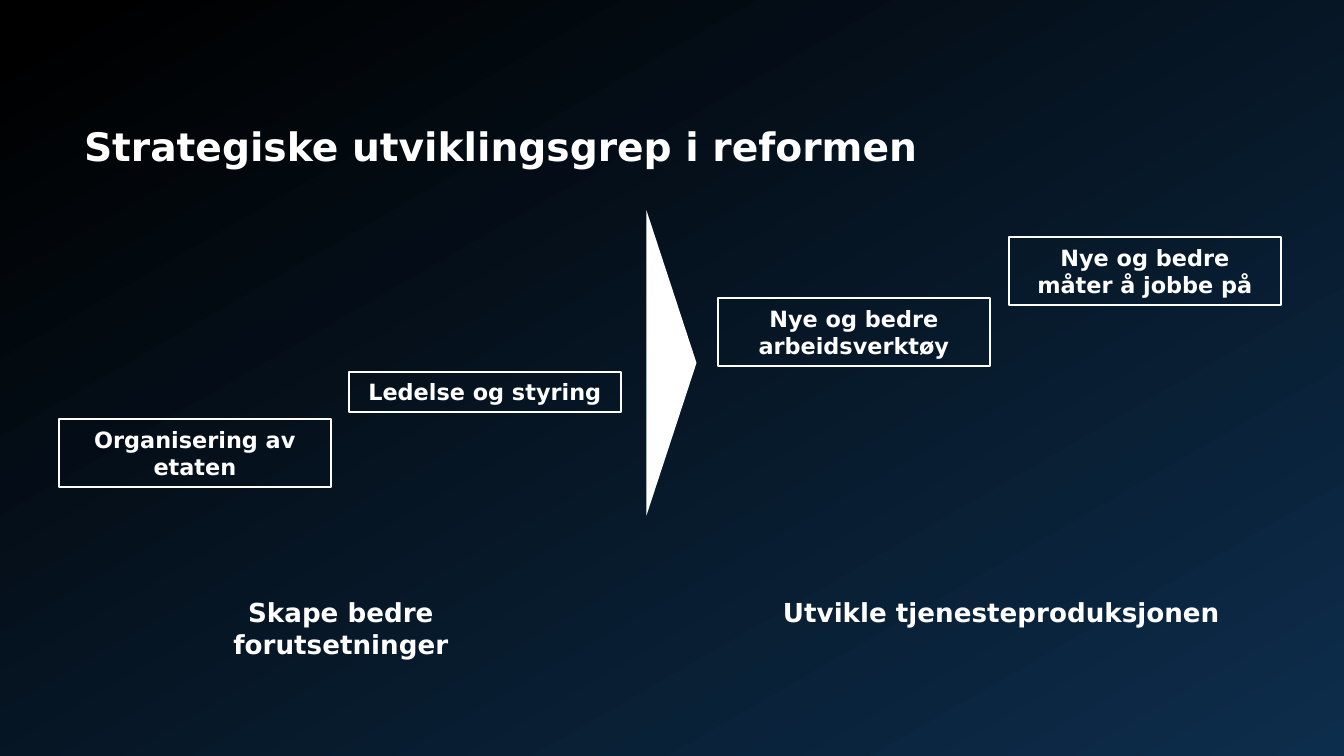
"""Build the slide on strategic development steps in the reform."""
from pptx import Presentation
from pptx.dml.color import RGBColor
from pptx.enum.shapes import MSO_SHAPE as SHAPE
from pptx.enum.text import MSO_ANCHOR as ANCHOR, MSO_AUTO_SIZE as AUTO, PP_ALIGN as ALIGN
from pptx.util import Emu, Pt

PX = 914400 / 134.4
WHITE = "FFFFFF"


def px(*values):
    return [Emu(round(v * PX)) for v in values]


def put_text(tf, text, size, align, anchor=ANCHOR.TOP):
    tf.text = text
    tf.word_wrap = True
    tf.auto_size = AUTO.NONE
    tf.vertical_anchor = anchor
    p = tf.paragraphs[0]
    p.alignment = align
    for r in p.runs:
        r.font.name = "DejaVu Sans"
        r.font.size = Pt(size)
        r.font.bold = True
        r.font.color.rgb = RGBColor.from_string(WHITE)


prs = Presentation()
prs.slide_width, prs.slide_height = px(1344, 756)
s = prs.slides.add_slide(prs.slide_layouts[5])

bg = s.background.fill
bg.gradient()
bg.gradient_angle = 300
for stop, (color, position) in zip(bg.gradient_stops, [("000000", 0.03), ("0D2D4C", 1)]):
    stop.color.rgb = RGBColor.from_string(color)
    stop.position = position

title = s.shapes.title
title.left, title.top, title.width, title.height = px(84, 128, 1176, 84)
tf = title.text_frame
put_text(tf, "Strategiske utviklingsgrep i reformen", 21, ALIGN.LEFT)
tf.margin_left = tf.margin_right = tf.margin_top = tf.margin_bottom = 0
tf.paragraphs[0].line_spacing = 0.9

arrow = s.shapes.add_shape(SHAPE.ISOSCELES_TRIANGLE, *px(519, 338, 305, 50))
arrow.rotation = 90
arrow.shadow.inherit = False
arrow.fill.solid()
arrow.fill.fore_color.rgb = RGBColor.from_string(WHITE)
arrow.line.fill.background()

for left, width, text in [
    (124, 434, "Skape bedre\vforutsetninger"),
    (769, 465, "Utvikle tjenesteproduksjonen"),
]:
    tb = s.shapes.add_textbox(*px(left, 590, width, 46))
    put_text(tb.text_frame, text, 14, ALIGN.CENTER)
    tb.text_frame.word_wrap = False

for left, top, height, text in [
    (59, 419, 68, "Organisering av etaten"),
    (349, 372, 40, "Ledelse og styring"),
    (718, 298, 68, "Nye og bedre arbeidsverktøy"),
    (1009, 237, 68, "Nye og bedre måter å jobbe på"),
]:
    box = s.shapes.add_shape(SHAPE.RECTANGLE, *px(left, top, 272, height))
    box.shadow.inherit = False
    box.fill.background()
    box.line.color.rgb = RGBColor.from_string(WHITE)
    box.line.width = Pt(0.75)
    put_text(box.text_frame, text, 12, ALIGN.CENTER, ANCHOR.MIDDLE)

prs.save("out.pptx")
